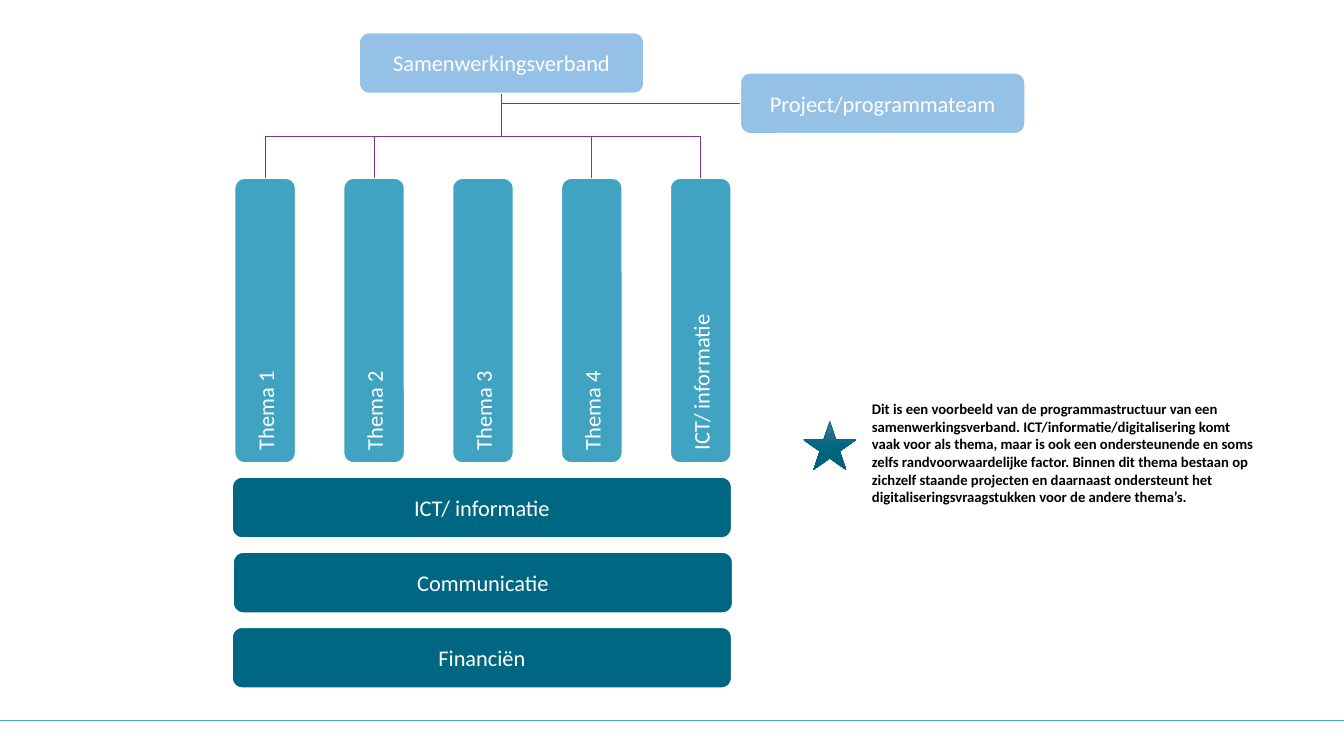
"""Build a slide with the programme structure of a partnership."""
from copy import deepcopy

from lxml.etree import SubElement
from pptx import Presentation
from pptx.dml.color import RGBColor
from pptx.enum.shapes import MSO_CONNECTOR as Connector, MSO_SHAPE as Shape
from pptx.enum.text import MSO_ANCHOR as Anchor, MSO_AUTO_SIZE as AutoSize, PP_ALIGN as Align
from pptx.oxml.ns import qn
from pptx.util import Inches, Pt

COLORS = {
    "light": "96C1E6", "theme": "3FA3C1", "dark": "006782", "white": "FFFFFF",
    "black": "000000", "link": "883486", "star_top": "4B7A90", "star_bottom": "005C74",
}
FONT = "Calibri"
HEADS = [("Samenwerkingsverband", 3.56, 0.32), ("Project/programmateam", 7.34, 0.72)]
THEMES = ["Thema 1", "Thema 2", "Thema 3", "Thema 4", "ICT/ informatie"]
SUPPORT = [("ICT/ informatie", 2.3), ("Communicatie", 2.31), ("Financiën", 2.3)]
NOTE = (
    "Dit is een voorbeeld van de programmastructuur van een samenwerkingsverband. "
    "ICT/informatie/digitalisering komt vaak voor als thema, maar is ook een "
    "ondersteunende en soms zelfs randvoorwaardelijke factor. Binnen dit thema bestaan "
    "op zichzelf staande projecten en daarnaast ondersteunt het "
    "digitaliseringsvraagstukken voor de andere thema’s."
)

BOX_LENGTH, BOX_DEPTH = 2.83, 0.61
THEME_CENTER_X, THEME_CENTER_Y, THEME_STEP = 2.63, 3.18, 1.08
SUPPORT_TOP, SUPPORT_STEP, SUPPORT_WIDTH = 4.73, 0.745, 4.96
TRUNK_X, TRUNK_TOP, THEME_TOP = 4.97, 0.93, 1.77
TEAM_LEFT, TEAM_CENTER_Y = 7.34, 1.03
FOOTER_Y = 7.15


def color(name):
    return RGBColor.from_string(COLORS[name])


def style_text(paragraph, text, size, color_name, align):
    paragraph.text = text
    paragraph.alignment = align
    paragraph.font.name = FONT
    paragraph.font.size = Pt(size)
    paragraph.font.color.rgb = color(color_name)


def add_box(slide, text, left, top, width, fill, align=Align.CENTER):
    box = slide.shapes.add_shape(
        Shape.ROUNDED_RECTANGLE, *map(Inches, (left, top, width, BOX_DEPTH)))
    box.shadow.inherit = False
    box.fill.solid()
    box.fill.fore_color.rgb = color(fill)
    box.line.color.rgb = color("white")
    box.line.width = Pt(1.5)
    box.text_frame.vertical_anchor = Anchor.MIDDLE
    style_text(box.text_frame.paragraphs[0], text, 16, "white", align)
    return box


def add_line(slide, kind, start, end, color_name, width):
    line = slide.shapes.add_connector(kind, *map(Inches, (*start, *end)))
    line.line.color.rgb = color(color_name)
    line.line.width = Pt(width)
    SubElement(line.element.spPr, qn("a:effectLst"))
    return line


def add_theme_link(slide, theme_x):
    side = 1 if theme_x < TRUNK_X else -1
    center_x, center_y = (theme_x + TRUNK_X) / 2, (THEME_TOP + TRUNK_TOP) / 2
    half_width = side * (THEME_TOP - TRUNK_TOP) / 2
    half_height = abs(theme_x - TRUNK_X) / 2
    link = add_line(
        slide, Connector.ELBOW, (center_x + half_width, center_y + half_height),
        (center_x - half_width, center_y - half_height), "link", 0.5)
    link.element.spPr.xfrm.rot = 90 if side > 0 else 270


def add_team_link(slide):
    link = add_line(slide, Connector.ELBOW, (TRUNK_X, TRUNK_TOP),
                    (TEAM_LEFT, TEAM_CENTER_Y), "link", 0.5)
    link.element.spPr.xfrm.rot = 180
    link.element.spPr.find(qn("a:prstGeom")).set("prst", "bentConnector2")


def add_star(slide):
    star = slide.shapes.add_shape(
        Shape.STAR_5_POINT, *map(Inches, (7.97, 4.18, 0.52, 0.48)))
    star.shadow.inherit = False
    star.fill.gradient()
    star.fill.gradient_angle = 270
    stop_list = star.element.spPr.find(".//" + qn("a:gsLst"))
    stop_list.insert(1, deepcopy(stop_list[0]))
    stops = zip(star.fill.gradient_stops, (0, 0.5, 1), ("star_top", "dark", "star_bottom"))
    for stop, position, name in stops:
        stop.position = position
        stop.color.rgb = color(name)
    star.line.color.rgb = color("dark")
    star.line.width = Pt(0.5)


def add_note(slide):
    note = slide.shapes.add_textbox(*map(Inches, (8.55, 3.92, 4.04, 1.16)))
    note.text_frame.word_wrap = True
    note.text_frame.auto_size = AutoSize.SHAPE_TO_FIT_TEXT
    paragraph = note.text_frame.paragraphs[0]
    style_text(paragraph, NOTE, 10.5, "black", Align.LEFT)
    paragraph.font.bold = True


def main():
    presentation = Presentation()
    presentation.slide_width = Inches(13.33)
    presentation.slide_height = Inches(7.5)
    slide = presentation.slides.add_slide(presentation.slide_layouts[6])

    add_line(slide, Connector.STRAIGHT, (0, FOOTER_Y), (13.33, FOOTER_Y), "theme", 1)
    add_note(slide)
    add_star(slide)
    for text, left, top in HEADS:
        add_box(slide, text, left, top, BOX_LENGTH, "light")
    for index, (text, left) in enumerate(SUPPORT):
        add_box(slide, text, left, SUPPORT_TOP + index * SUPPORT_STEP, SUPPORT_WIDTH, "dark")
    for index, text in enumerate(THEMES):
        center_x = THEME_CENTER_X + index * THEME_STEP
        box = add_box(slide, text, center_x - BOX_LENGTH / 2, THEME_CENTER_Y - BOX_DEPTH / 2,
                      BOX_LENGTH, "theme", Align.LEFT)
        box.rotation = 270
        if index != len(THEMES) // 2:
            add_theme_link(slide, center_x)
    add_team_link(slide)
    presentation.save("out.pptx")


if __name__ == "__main__":
    main()
